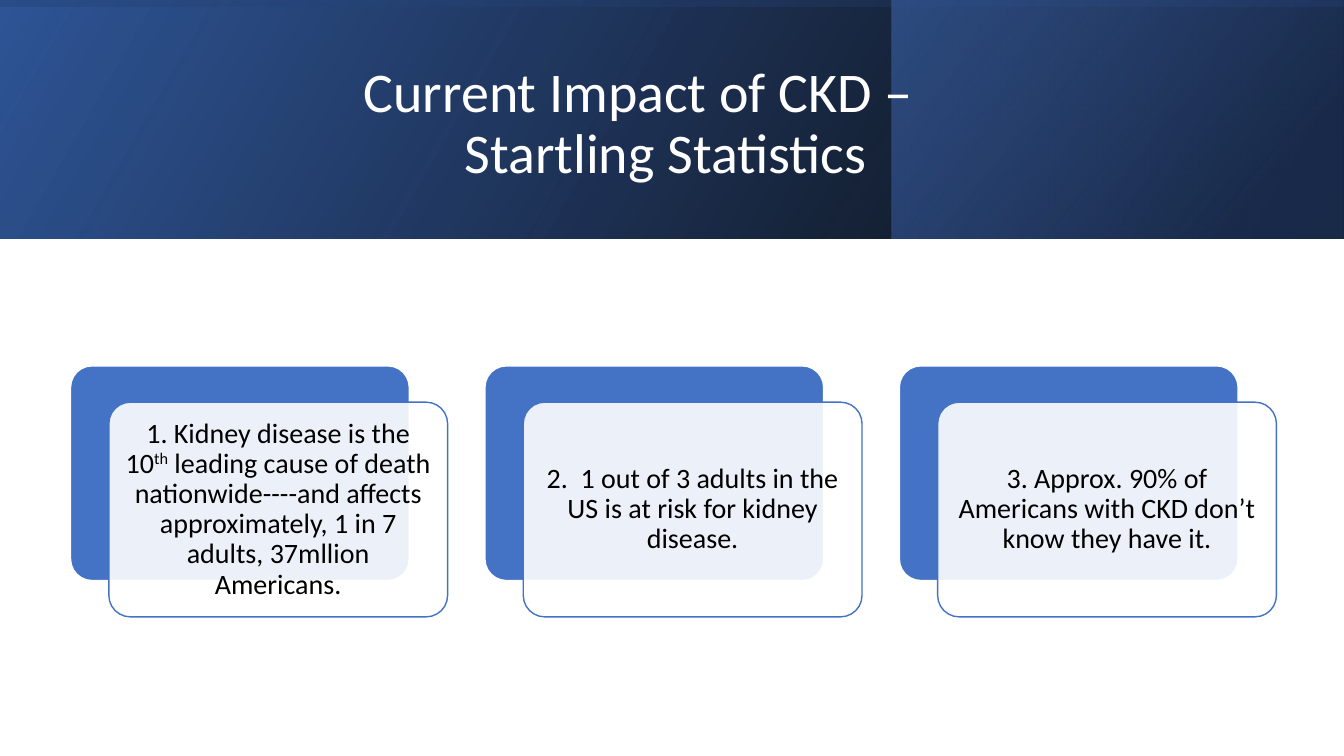
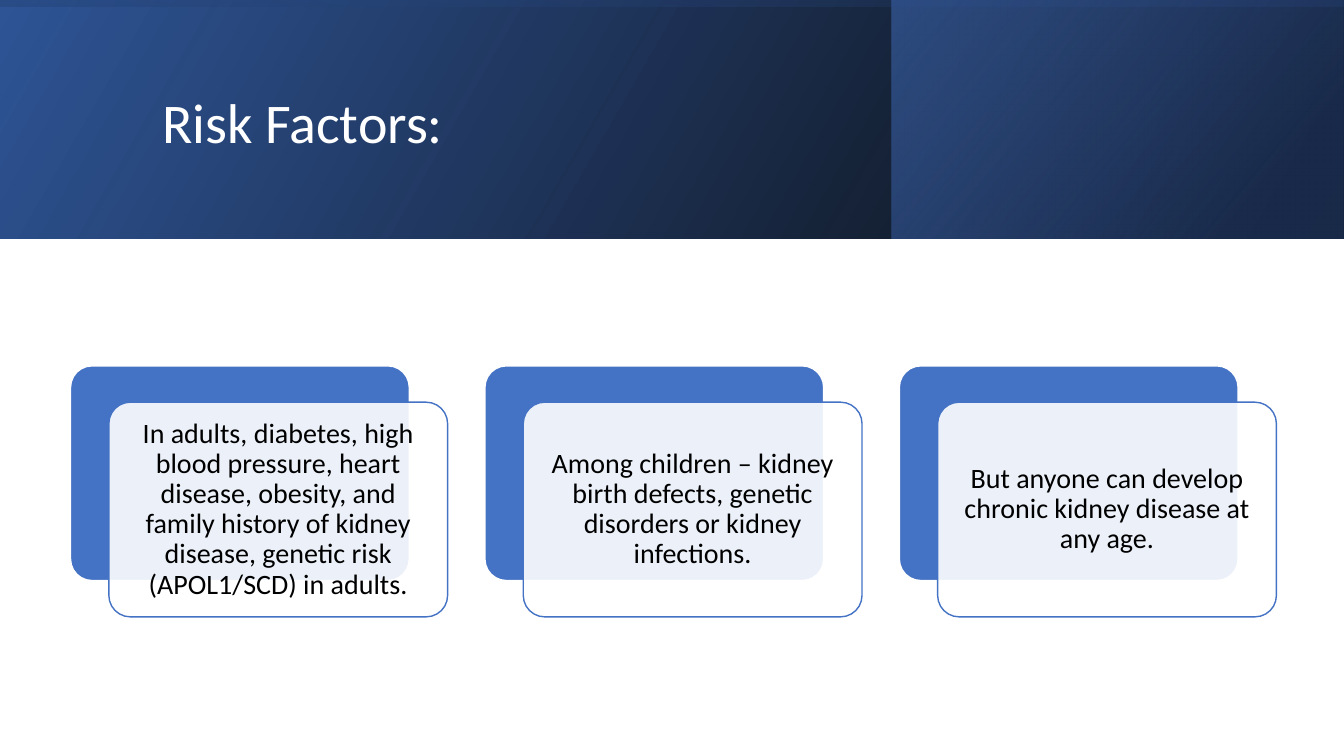
"""Build two slides on chronic kidney disease: statistics and risk factors."""
from dataclasses import dataclass

from lxml.etree import SubElement
from pptx import Presentation
from pptx.dml.color import RGBColor as RGB
from pptx.enum.shapes import MSO_SHAPE as Shape
from pptx.enum.text import MSO_ANCHOR as Anchor, PP_ALIGN as Align
from pptx.oxml.ns import qn
from pptx.util import Inches, Pt


@dataclass(frozen=True)
class Theme:
    font: str = "Calibri"
    title_size: int = 40
    card_size: int = 20
    line_spacing: float = 0.9
    white: str = "FFFFFF"
    black: str = "000000"
    accent: str = "4472C4"
    deep: str = "2F5597"
    navy: str = "203864"


THEME = Theme()
SLIDE_WIDTH, SLIDE_HEIGHT = 13.33, 7.5
BAND_HEIGHT = 2.37
CARD_LEFT, CARD_TOP, CARD_PITCH = 0.7, 3.63, 4.11
CARD_WIDTH, CARD_HEIGHT = 3.36, 2.13
FRONT_SHIFT_X, FRONT_SHIFT_Y = 0.38, 0.36

SLIDES = [
    (
        [("Current Impact of CKD –", 2), ("Startling Statistics", 3)],
        [
            "1. Kidney disease is the 10^th^ leading cause of death nationwide"
            "----and affects approximately, 1 in 7 adults, 37mllion Americans.",
            "2.  1 out of 3 adults in the US is at risk for kidney disease.",
            "3. Approx. 90% of Americans with CKD don’t know they have it.",
        ],
    ),
    (
        [("Risk Factors:", 0)],
        [
            "In adults, diabetes, high blood pressure, heart disease, obesity, "
            "and family history of kidney disease, genetic risk (APOL1/SCD) in adults.",
            "Among children – kidney birth defects, genetic disorders or kidney infections.",
            "But anyone can develop chronic kidney disease at any age.",
        ],
    ),
]


def set_alpha(color, percent):
    if percent < 100:
        SubElement(color, qn("a:alpha"), val=str(percent * 1000))


def write(paragraph, text, *, size, color, align=Align.LEFT, indent=0):
    paragraph.alignment = align
    paragraph.line_spacing = THEME.line_spacing
    if indent:
        properties = paragraph._p.get_or_add_pPr()
        properties.set("marL", str(Inches(indent)))
        properties.set("indent", "0")
    for position, part in enumerate(text.split("^")):
        run = paragraph.add_run()
        run.text = part
        run.font.name = THEME.font
        run.font.size = Pt(size)
        run.font.color.rgb = RGB.from_string(color)
        if position % 2:
            run.font._element.set("baseline", "30000")


class Deck:
    def __init__(self):
        self.presentation = Presentation()
        self.presentation.slide_width = Inches(SLIDE_WIDTH)
        self.presentation.slide_height = Inches(SLIDE_HEIGHT)
        self.slide = None

    def new_slide(self):
        self.slide = self.presentation.slides.add_slide(self.presentation.slide_layouts[6])

    def shape(self, kind, left, top, width, height):
        shape = self.slide.shapes.add_shape(
            kind, Inches(left), Inches(top), Inches(width), Inches(height)
        )
        shape.shadow.inherit = False
        return shape

    def gradient(self, left, top, width, height, stops, angle, rotation=0):
        panel = self.shape(Shape.RECTANGLE, left, top, width, height)
        panel.rotation = rotation
        panel.element.spPr.get_or_add_xfrm().set("flipH", "1")
        panel.line.fill.background()
        panel.fill.gradient()
        panel.fill.gradient_angle = angle
        for stop, (position, color, _) in zip(panel.fill.gradient_stops, stops):
            stop.position = position
            stop.color.rgb = RGB.from_string(color)
        colors = list(panel.element.spPr.iter(qn("a:srgbClr")))
        for color, (_, _, alpha) in zip(colors, stops):
            set_alpha(color, alpha)

    def band(self):
        self.gradient(0, 0, SLIDE_WIDTH, BAND_HEIGHT,
                      [(0, THEME.black, 96), (1, THEME.deep, 100)], 30)
        self.gradient(8.84, 0, 4.48, BAND_HEIGHT,
                      [(0.19, THEME.navy, 68), (1, THEME.accent, 48)], 40)
        offset = (SLIDE_WIDTH - BAND_HEIGHT) / 2
        self.gradient(offset, -offset, BAND_HEIGHT, SLIDE_WIDTH,
                      [(0.23, THEME.deep, 16), (0.99, THEME.black, 45)], 10, 270)

    def title(self, lines):
        heading = self.slide.shapes.add_textbox(
            Inches(1.51), Inches(0.38), Inches(10.63), Inches(1.72)
        ).text_frame
        heading.word_wrap = True
        heading.vertical_anchor = Anchor.MIDDLE
        for number, (text, indent) in enumerate(lines):
            paragraph = heading.add_paragraph() if number else heading.paragraphs[0]
            write(paragraph, text, size=THEME.title_size, color=THEME.white, indent=indent)

    def panel(self, left, top, fill, line, alpha=100):
        panel = self.shape(Shape.ROUNDED_RECTANGLE, left, top, CARD_WIDTH, CARD_HEIGHT)
        panel.adjustments[0] = 0.1
        panel.fill.solid()
        panel.fill.fore_color.rgb = RGB.from_string(fill)
        set_alpha(next(panel.element.spPr.iter(qn("a:srgbClr"))), alpha)
        panel.line.color.rgb = RGB.from_string(line)
        panel.line.width = Pt(1)
        return panel

    def card(self, left, text):
        self.panel(left, CARD_TOP, THEME.accent, THEME.white)
        front = self.panel(left + FRONT_SHIFT_X, CARD_TOP + FRONT_SHIFT_Y,
                           THEME.white, THEME.accent, 90)
        message = front.text_frame
        message.word_wrap = True
        message.vertical_anchor = Anchor.MIDDLE
        message.margin_left = message.margin_right = Inches(0.08)
        message.margin_top = message.margin_bottom = Inches(0.08)
        write(message.paragraphs[0], text, size=THEME.card_size,
              color=THEME.black, align=Align.CENTER)


def main():
    deck = Deck()
    for heading, facts in SLIDES:
        deck.new_slide()
        deck.band()
        deck.title(heading)
        for column, fact in enumerate(facts):
            deck.card(CARD_LEFT + column * CARD_PITCH, fact)
    deck.presentation.save("out.pptx")


if __name__ == "__main__":
    main()
